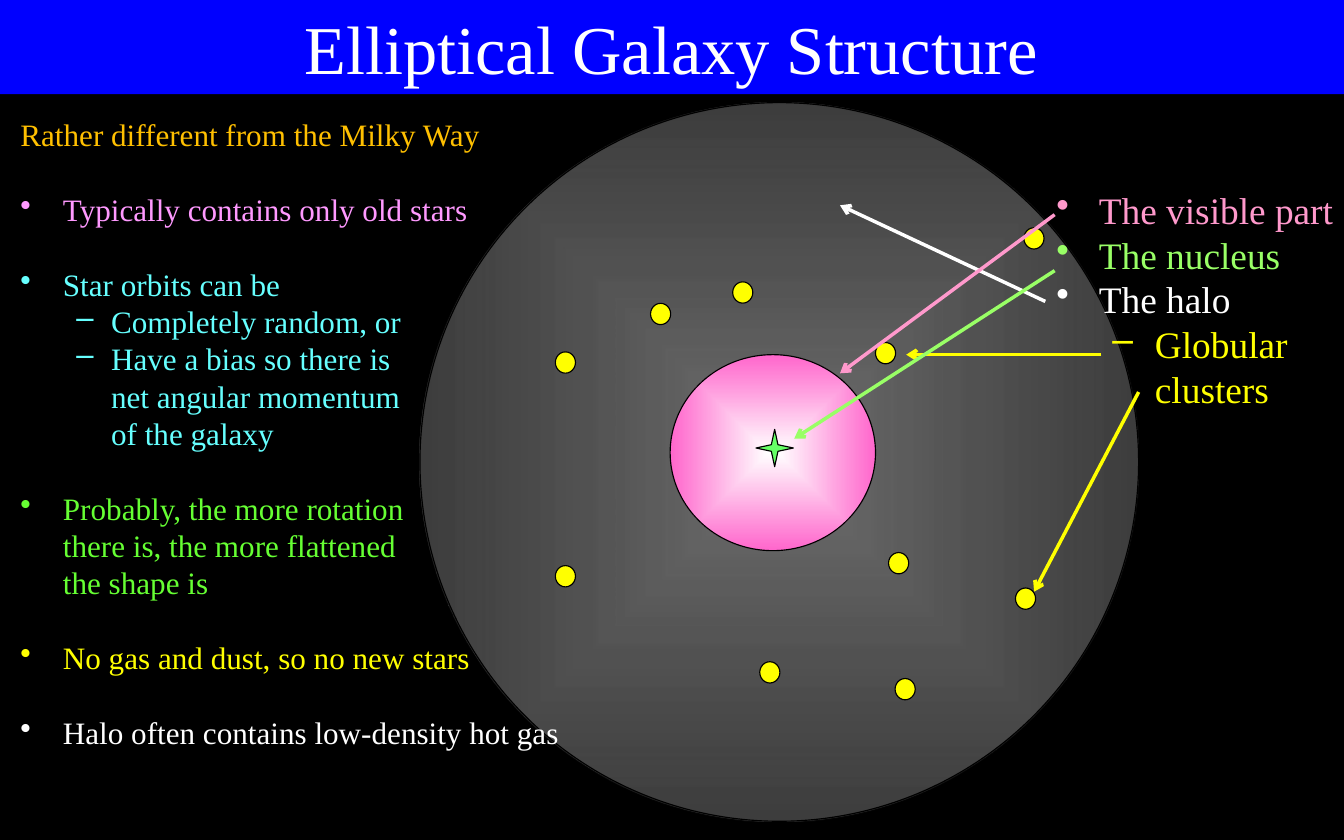
import pptx
import pptx.util
import pptx.dml.color
import pptx.enum.shapes
import pptx.enum.text
import pptx.oxml
import pptx.oxml.ns

RGB = pptx.dml.color.RGBColor
KIND = pptx.enum.shapes.MSO_SHAPE
Pt = pptx.util.Pt
qn = pptx.oxml.ns.qn
FONT = "Times New Roman"

BLACK = RGB(0x00, 0x00, 0x00)
WHITE = RGB(0xFF, 0xFF, 0xFF)
BLUE = RGB(0x00, 0x00, 0xFF)
YELLOW = RGB(0xFF, 0xFF, 0x00)
AMBER = RGB(0xFF, 0xC0, 0x00)
ROSE = RGB(0xFF, 0x99, 0xCC)
LILAC = RGB(0xFF, 0x99, 0xFF)
CYAN = RGB(0x66, 0xFF, 0xFF)
LIME = RGB(0x99, 0xFF, 0x66)
GREEN = RGB(0x66, 0xFF, 0x33)
MINT = RGB(0x66, 0xFF, 0x66)
PINK = RGB(0xFF, 0x66, 0xCC)
GREY = RGB(0x80, 0x80, 0x80)
SLATE = RGB(0x5C, 0x5C, 0x5C)

deck = pptx.Presentation()
deck.slide_width = pptx.util.Inches(12)
deck.slide_height = pptx.util.Inches(7.5)
slide = deck.slides.add_slide(deck.slide_layouts[6])
slide.background.fill.solid()
slide.background.fill.fore_color.rgb = BLACK

# Grid of 144 columns by 90 rows, square cells
CELL = deck.slide_width / 144


def grid(*cells):
    return [round(n * CELL) for n in cells]


def draw(home, kind, box, fill):
    """Add an outlined shape; fill is a colour or (colour, opacity) from centre to edge."""
    shape = home.add_shape(kind, *grid(*box))
    shape.shadow.inherit = False
    shape.line.color.rgb = BLACK
    shape.line.width = Pt(0.75)
    if isinstance(fill, RGB):
        shape.fill.solid()
        shape.fill.fore_color.rgb = fill
        return shape
    stops = "".join(
        f'<a:gs pos="{pos}"><a:srgbClr val="{tint}"><a:alpha val="{alpha * 1000}"/></a:srgbClr></a:gs>'
        for pos, (tint, alpha) in zip((0, 100000), fill))
    blend = pptx.oxml.parse_xml(
        f'<a:gradFill {pptx.oxml.ns.nsdecls("a")} rotWithShape="1"><a:gsLst>{stops}</a:gsLst>'
        '<a:path path="shape"><a:fillToRect l="50000" t="50000" r="50000" b="50000"/></a:path>'
        '</a:gradFill>')
    shape._element.spPr.find(qn("a:prstGeom")).addnext(blend)
    return shape


# Halo with its globular clusters
halo = slide.shapes.add_group_shape().shapes
draw(halo, KIND.OVAL, (45, 11, 77, 77), ((GREY, 87), (SLATE, 65)))
for x, y in [(93.8, 36.7), (69.7, 32.5), (59.5, 37.7), (78.5, 30.2), (59.5, 60.6),
             (81.4, 70.9), (95.2, 59.2), (109.7, 24.4), (95.9, 72.7), (108.8, 63)]:
    draw(halo, KIND.OVAL, (x, y, 2.16, 2.28), YELLOW)

# Title band
band = draw(slide.shapes, KIND.RECTANGLE, (0, 0, 144, 10.1), BLUE)
band.line.fill.background()
band.text_frame.vertical_anchor = pptx.enum.text.MSO_ANCHOR.MIDDLE
para = band.text_frame.paragraphs[0]
para.alignment = pptx.enum.text.PP_ALIGN.CENTER
run = para.add_run()
run.text = "Elliptical Galaxy Structure"
run.font.name, run.font.size = FONT, Pt(44)
run.font.color.rgb = WHITE

# Visible part and nucleus
draw(slide.shapes, KIND.OVAL, (71.8, 38, 22, 21), ((WHITE, 100), (PINK, 100)))
star = draw(slide.shapes, KIND.STAR_4_POINT, (81, 46, 4, 4), MINT)
star.adjustments[0] = 0.125

# Arrows from the labels
for ends, tint in [((112, 32.3, 90, 22), WHITE), ((118, 38, 97.1, 38), YELLOW),
                   ((122, 42, 110.8, 63.4), YELLOW), ((113, 23, 90, 40), ROSE),
                   ((113, 29, 85.1, 47), LIME)]:
    arrow = slide.shapes.add_connector(pptx.enum.shapes.MSO_CONNECTOR.STRAIGHT, *grid(*ends))
    arrow.line.color.rgb = tint
    arrow.line.width = Pt(2.25)
    arrow.line._get_or_add_ln().append(pptx.oxml.parse_xml(
        f'<a:tailEnd {pptx.oxml.ns.nsdecls("a")} type="arrow"/>'))
    arrow._element.spPr.append(pptx.oxml.parse_xml(
        f'<a:effectLst {pptx.oxml.ns.nsdecls("a")}/>'))

# Text lists: bullet, gap above in lines, colour, lines
labels = [("•", 0, ROSE, ["The visible part"]),
          ("•", 0, LIME, ["The nucleus"]),
          ("•", 0, WHITE, ["The halo"]),
          ("–", 0, YELLOW, ["Globular clusters"])]
facts = [("", 0, AMBER, ["Rather different from the Milky Way"]),
         ("•", 1, LILAC, ["Typically contains only old stars"]),
         ("•", 1, CYAN, ["Star orbits can be"]),
         ("–", 0, CYAN, ["Completely random, or"]),
         ("–", 0, CYAN, ["Have a bias so there is", "net angular momentum", "of the galaxy"]),
         ("•", 1, GREEN, ["Probably, the more rotation", "there is, the more flattened",
                          "the shape is"]),
         ("•", 1, YELLOW, ["No gas and dust, so no new stars"]),
         ("•", 1, WHITE, ["Halo often contains low-density hot gas"])]

for box, size, pitch, dash, items in [
        ((112, 19.5, 32.3, 25.5), 24, 28.7, (0.88, 0.38), labels),
        ((1, 11.8, 62.8, 69.8), 20, 24, (0.81, 0.31), facts)]:
    frame = slide.shapes.add_textbox(*grid(*box)).text_frame
    frame.word_wrap = True
    for i, (mark, gap, tint, lines) in enumerate(items):
        para = frame.add_paragraph() if i else frame.paragraphs[0]
        para.line_spacing = Pt(pitch)
        para.space_before = Pt(gap * pitch)
        if mark:
            para.level = int(mark == "–")
            left, hang = dash if para.level else (0.38, 0.38)
            props = para._p.get_or_add_pPr()
            props.set("marL", str(pptx.util.Inches(left)))
            props.set("indent", str(-pptx.util.Inches(hang)))
            props.append(pptx.oxml.parse_xml(
                f'<a:buChar {pptx.oxml.ns.nsdecls("a")} char="{mark}"/>'))
        for j, line in enumerate(lines):
            if j:
                para.add_line_break()
            run = para.add_run()
            run.text = line
            run.font.name, run.font.size = FONT, Pt(size)
            run.font.color.rgb = tint

deck.save("out.pptx")
